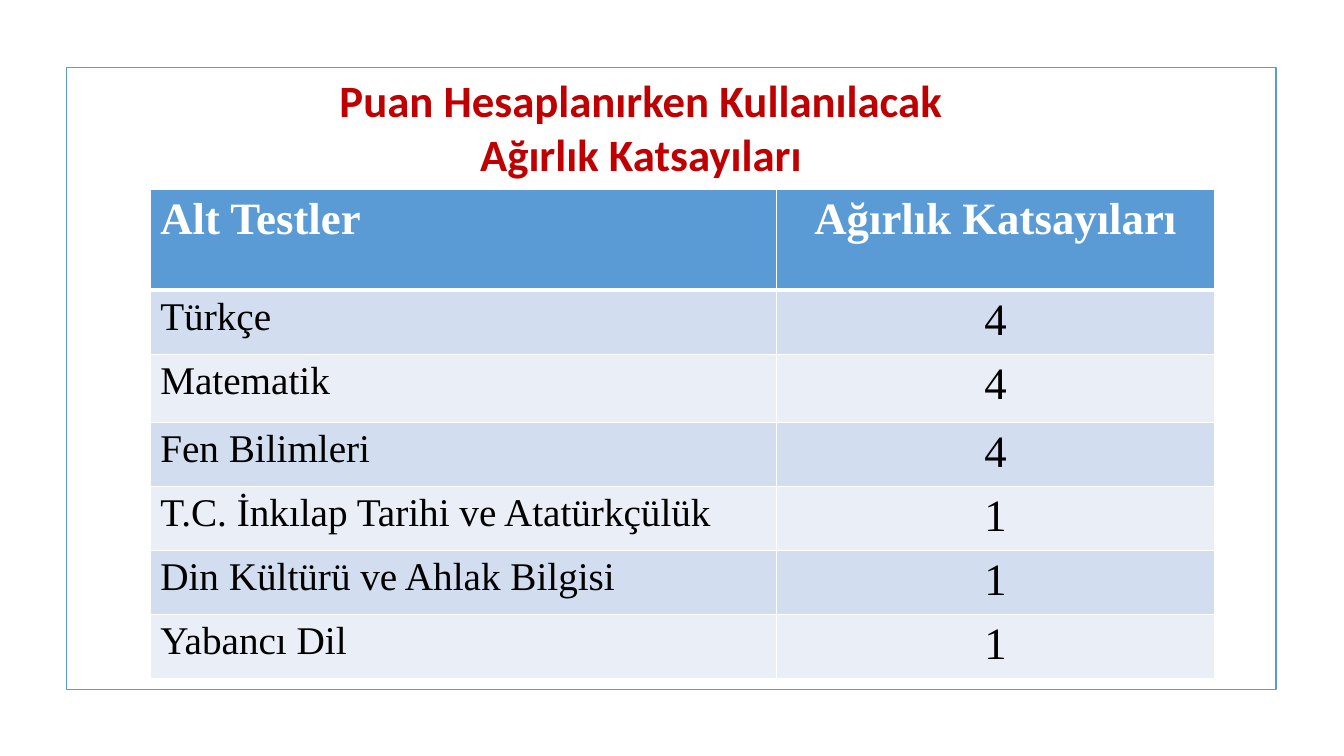
from lxml.etree import SubElement
from pptx import Presentation
from pptx.dml.color import RGBColor
from pptx.enum.shapes import MSO_SHAPE as Preset
from pptx.enum.text import MSO_ANCHOR as Anchor, PP_ALIGN as Align
from pptx.oxml.ns import qn
from pptx.util import Emu, Pt

EMU_PER_PX = 9144  # 100 px to the inch
BLUE, RED, WHITE, BLACK = "5B9BD5", "C00000", "FFFFFF", "000000"
BANDS = ("D2DEEF", "EAEFF7")

HEADER = ("Alt Testler", "Ağırlık Katsayıları")
WEIGHTS = [
    ("Türkçe", 4),
    ("Matematik", 4),
    ("Fen Bilimleri", 4),
    ("T.C. İnkılap Tarihi ve Atatürkçülük", 1),
    ("Din Kültürü ve Ahlak Bilgisi", 1),
    ("Yabancı Dil", 1),
]


def px(length):
    return Emu(length * EMU_PER_PX)


def color(value):
    return RGBColor.from_string(value)


class SlideBuilder:
    def __init__(self, slide):
        self.slide = slide
        self.title_style = {"name": "Calibri", "size": Pt(32), "bold": True}
        self.header_style = {"name": "Times New Roman", "size": Pt(32), "bold": True}
        self.label_style = {"name": "Times New Roman", "size": Pt(28), "bold": False}
        self.value_style = {**self.label_style, "size": Pt(32)}

    def add_text(self, para, text, style, ink, align):
        para.alignment = align
        span = para.add_run()
        span.text = text
        for name, value in style.items():
            setattr(span.font, name, value)
        span.font.color.rgb = color(ink)

    def frame(self, *bounds):
        box = self.slide.shapes.add_shape(Preset.RECTANGLE, *map(px, bounds))
        box.shadow.inherit = False
        box.fill.background()
        box.line.color.rgb = color(BLUE)
        box.line.width = Pt(1.25)

    def title(self, lines, *bounds):
        frame = self.slide.shapes.add_textbox(*map(px, bounds)).text_frame
        frame.word_wrap = True
        frame.vertical_anchor = Anchor.MIDDLE
        for index, line in enumerate(lines):
            para = frame.add_paragraph() if index else frame.paragraphs[0]
            self.add_text(para, line, self.title_style, RED, Align.CENTER)

    def borders(self, cell, top, bottom):
        """Draw white cell edges; top and bottom are widths in points."""
        properties = cell._tc.get_or_add_tcPr()
        for side, width in zip("LRTB", (1, 1, top, bottom)):
            edge = SubElement(properties, qn(f"a:ln{side}"), w=str(int(Pt(width))))
            fill = SubElement(edge, qn("a:solidFill"))
            SubElement(fill, qn("a:srgbClr"), val=WHITE)

    def table(self, rows, widths, heights, left, top):
        bounds = (left, top, sum(widths), sum(heights))
        table = self.slide.shapes.add_table(
            len(rows), len(widths), *map(px, bounds)).table
        for column, width in zip(table.columns, widths):
            column.width = px(width)
        for row, height in zip(table.rows, heights):
            row.height = px(height)
        for r, values in enumerate(rows):
            for c, value in enumerate(values):
                cell = table.cell(r, c)
                self.borders(cell, 3 if r == 1 else 1, 3 if r == 0 else 1)
                cell.fill.solid()
                cell.fill.fore_color.rgb = color(BANDS[(r - 1) % 2] if r else BLUE)
                body_style = self.value_style if c else self.label_style
                self.add_text(cell.text_frame.paragraphs[0], str(value),
                              body_style if r else self.header_style,
                              BLACK if r else WHITE,
                              Align.CENTER if c else Align.LEFT)


def main():
    deck = Presentation()
    deck.slide_width, deck.slide_height = px(1333), px(750)
    page = SlideBuilder(deck.slides.add_slide(deck.slide_layouts[6]))
    page.frame(66, 67, 1200, 617)
    page.title(["Puan Hesaplanırken Kullanılacak ", "Ağırlık Katsayıları "],
               191, 63, 900, 125)
    page.table([HEADER, *WEIGHTS], (621, 435), (100, 62, 68, 62, 62, 62, 62), 149, 188)
    deck.save("out.pptx")


if __name__ == "__main__":
    main()
